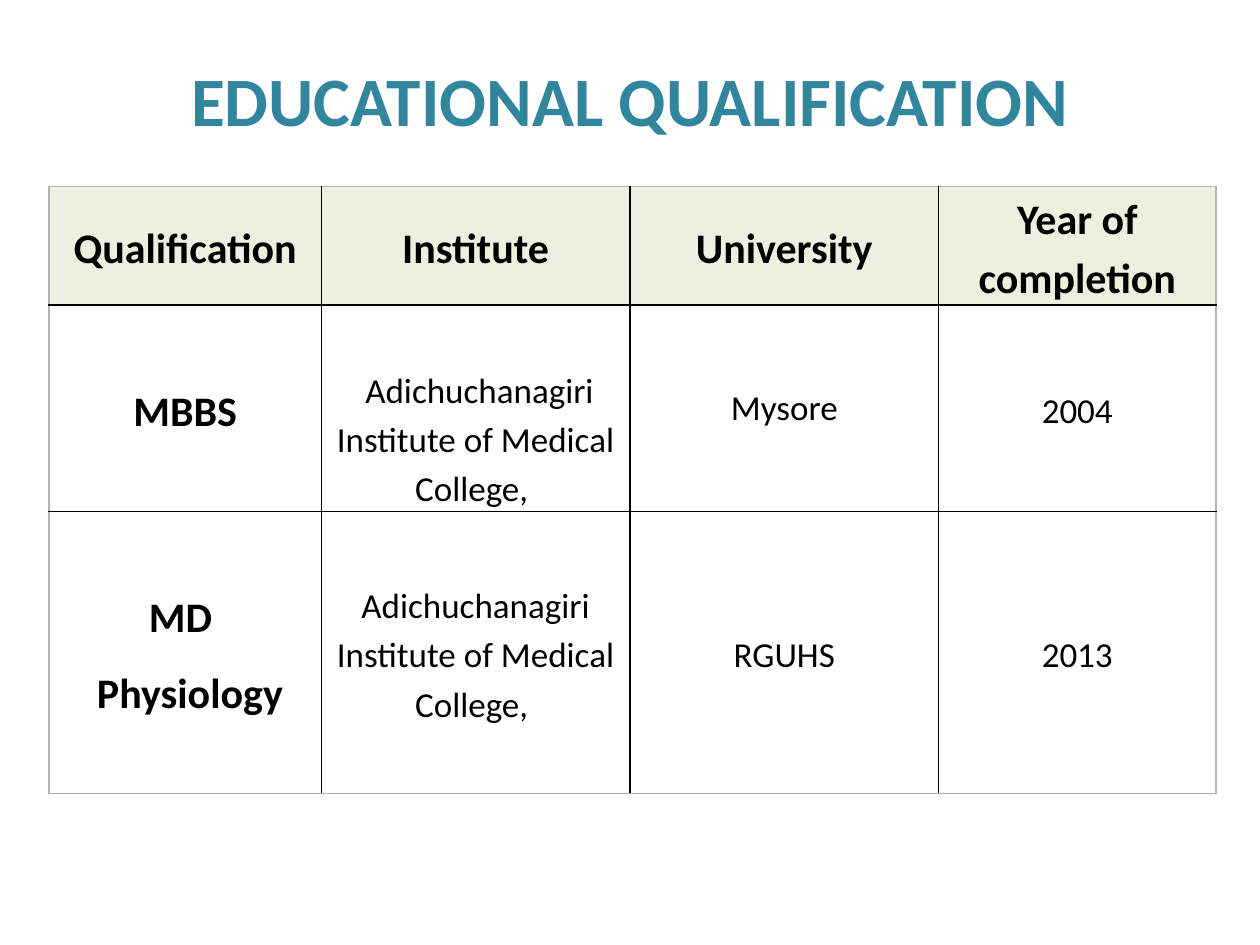
from lxml.etree import SubElement
from pptx import Presentation
from pptx.dml.color import RGBColor
from pptx.enum.text import MSO_ANCHOR as Anchor, PP_ALIGN as Align
from pptx.oxml.ns import qn
from pptx.util import Inches, Pt

TITLE = "EDUCATIONAL QUALIFICATION"
HEADERS = ["Qualification", "Institute", "University", "Year of completion"]
DEGREES = [
    ["MBBS", " Adichuchanagiri Institute of Medical College, ", "Mysore", "2004"],
    ["MD \n Physiology", "Adichuchanagiri Institute of Medical College, ", "RGUHS", "2013"],
]
COLUMN_WIDTHS = [2.16, 2.45, 2.45, 2.2]
ROW_HEIGHTS = [0.94, 1.64, 2.24]
TABLE_LEFT, TABLE_TOP = 0.39, 1.48
# Top and bottom margins of the cells whose text sits off centre
OFFSETS = {(1, 1): (0.46, 0), (1, 2): (0, 0.05)}
COLORS = {"title": "31859C", "text": "000000", "header": "EBF1DE",
          "inner": "000000", "outer": "B3B3B3"}
FONT = "Calibri"


def write(frame, text, size, color, bold=False, line_spacing=None, space_after=0):
    frame.word_wrap = True
    for index, line in enumerate(text.split("\n")):
        para = frame.add_paragraph() if index else frame.paragraphs[0]
        para.alignment = Align.CENTER
        para.line_spacing = line_spacing
        para.space_after = Pt(space_after)
        span = para.add_run()
        span.text = line
        span.font.name = FONT
        span.font.size = Pt(size)
        span.font.bold = bold
        span.font.color.rgb = RGBColor.from_string(color)


def set_borders(cell, outer_sides):
    """Draw grey lines on the table's outer sides and black ones elsewhere."""
    properties = cell._tc.get_or_add_tcPr()
    for index, side in enumerate("LRTB"):
        color = COLORS["outer" if side in outer_sides else "inner"]
        line = properties.makeelement(qn(f"a:ln{side}"), {"w": str(Pt(1))})
        fill = SubElement(line, qn("a:solidFill"))
        SubElement(fill, qn("a:srgbClr"), val=color)
        properties.insert(index, line)


def add_title(page):
    box = page.shapes.add_textbox(Inches(0.69), Inches(0.4), Inches(8.62), Inches(0.77))
    box.text_frame.vertical_anchor = Anchor.MIDDLE
    write(box.text_frame, TITLE, 39.6, COLORS["title"], bold=True)


def add_degree_table(page):
    rows = [HEADERS] + DEGREES
    last_row, last_column = len(rows) - 1, len(HEADERS) - 1
    table = page.shapes.add_table(
        len(rows), len(HEADERS), Inches(TABLE_LEFT), Inches(TABLE_TOP),
        Inches(sum(COLUMN_WIDTHS)), Inches(sum(ROW_HEIGHTS))).table
    table.horz_banding = False
    for column, width in zip(table.columns, COLUMN_WIDTHS):
        column.width = Inches(width)
    for row, height in zip(table.rows, ROW_HEIGHTS):
        row.height = Inches(height)

    for r, texts in enumerate(rows):
        for c, text in enumerate(texts):
            cell = table.cell(r, c)
            cell.vertical_anchor = Anchor.MIDDLE
            cell.margin_left = cell.margin_right = Inches(0.07)
            top, bottom = OFFSETS.get((r, c), (0, 0))
            cell.margin_top, cell.margin_bottom = Inches(top), Inches(bottom)
            if r == 0:
                cell.fill.solid()
                cell.fill.fore_color.rgb = RGBColor.from_string(COLORS["header"])
            else:
                cell.fill.background()
            heading = r == 0 or c == 0
            write(cell.text_frame, text, 24 if heading else 20, COLORS["text"],
                  bold=heading, line_spacing=1.15, space_after=10)
            edges = {"L": c == 0, "R": c == last_column, "T": r == 0, "B": r == last_row}
            set_borders(cell, [side for side, outer in edges.items() if outer])


def main():
    deck = Presentation()
    deck.slide_width, deck.slide_height = Inches(10), Inches(7.5)
    page = deck.slides.add_slide(deck.slide_layouts[6])
    add_title(page)
    add_degree_table(page)
    deck.save("out.pptx")


if __name__ == "__main__":
    main()
